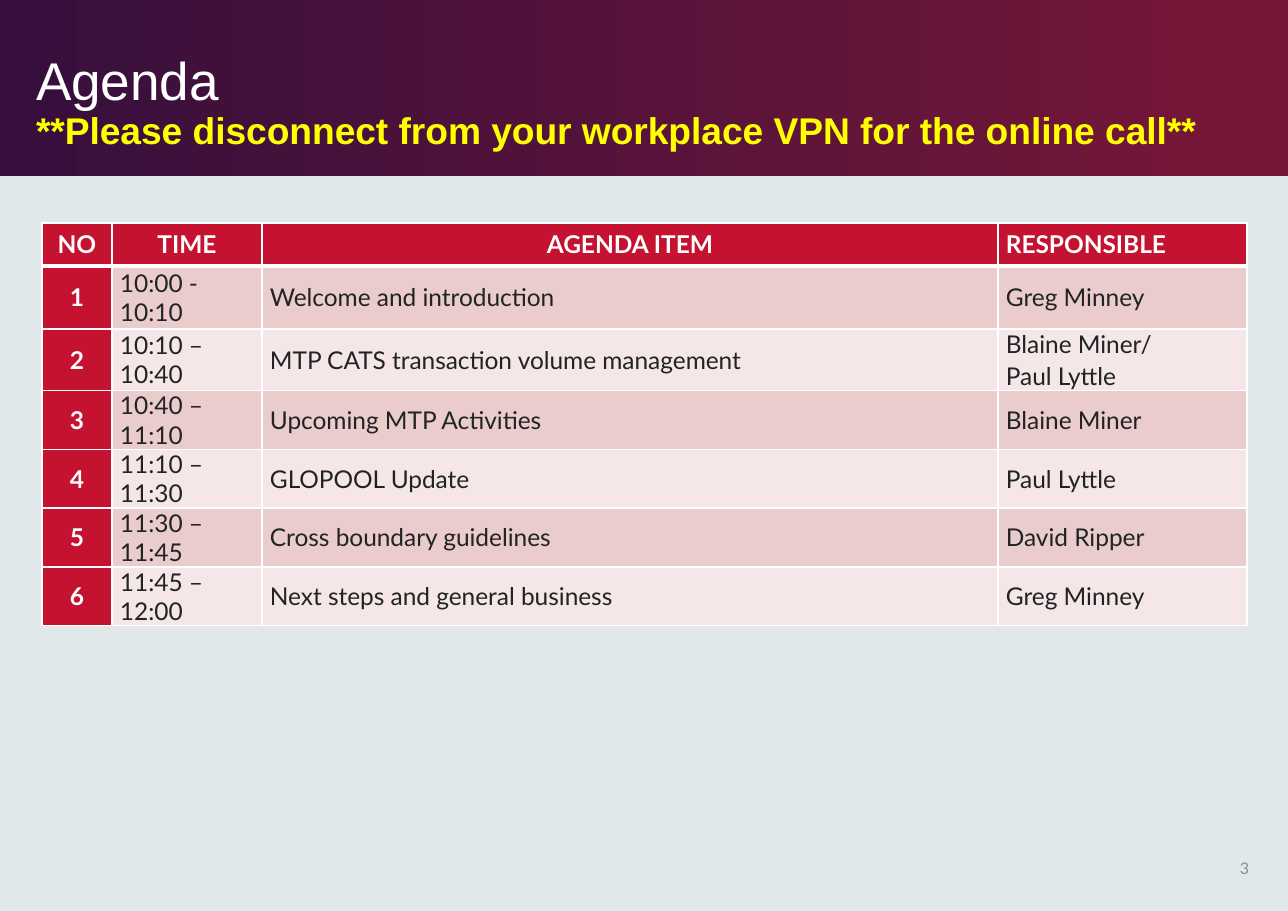
from lxml import etree
from pptx import Presentation
from pptx.dml.color import RGBColor
from pptx.enum.shapes import MSO_SHAPE
from pptx.enum.text import MSO_ANCHOR, MSO_AUTO_SIZE, PP_ALIGN
from pptx.oxml.ns import qn
from pptx.util import Pt

RECT = MSO_SHAPE.RECTANGLE
MIDDLE, BOTTOM = MSO_ANCHOR.MIDDLE, MSO_ANCHOR.BOTTOM
LEFT, CENTER, RIGHT = PP_ALIGN.LEFT, PP_ALIGN.CENTER, PP_ALIGN.RIGHT
SCALE = 8298  # EMU per px
WHITE, INK, RED = "FFFFFF", "222324", "C41230"
BANDS = ["EACCCD", "F5E7E8"]


def px(*lengths):
    return [n * SCALE for n in lengths]


def style(font, name, size, color, bold=False):
    font.name, font.size, font.bold = name, Pt(size), bold
    font.color.rgb = RGBColor.from_string(color)


prs = Presentation()
prs.slide_width, prs.slide_height = px(1288, 911)
s = prs.slides.add_slide(prs.slide_layouts[5])
s.background.fill.solid()
s.background.fill.fore_color.rgb = RGBColor.from_string("E0E8EA")

# Header band, behind the title
title = s.shapes.title
band = s.shapes.add_shape(RECT, *px(0, 0, 1288, 176))
band.shadow.inherit = False
band.line.fill.background()
band.fill.gradient()
band.fill.gradient_angle = 0
for stop, color, position in zip(band.fill.gradient_stops, ["360F3C", "771738"], [0, 0.99]):
    stop.color.rgb = RGBColor.from_string(color)
    stop.position = position
title._element.addprevious(band._element)

# Title
title.left, title.top, title.width, title.height = px(25, 0, 1263, 158)
tf = title.text_frame
tf.auto_size = MSO_AUTO_SIZE.NONE
tf.word_wrap = True
tf.vertical_anchor = BOTTOM
p = tf.paragraphs[0]
p.alignment = LEFT
p.line_spacing = 0.9
r = p.add_run()
r.text = "Agenda"
style(r.font, "Arial", 34.7, WHITE)
p.add_line_break()
r = p.add_run()
r.text = "**Please disconnect from your workplace VPN for the online call**"
style(r.font, "Arial", 24.3, "FFFF00", True)

# Agenda table
agenda = [
    ("NO", "TIME", "AGENDA ITEM", "RESPONSIBLE"),
    ("1", "10:00 - 10:10", "Welcome and introduction", "Greg Minney"),
    ("2", "10:10 – 10:40", "MTP CATS transaction volume management", "Blaine Miner/\nPaul Lyttle"),
    ("3", "10:40 – 11:10", "Upcoming MTP Activities", "Blaine Miner"),
    ("4", "11:10 – 11:30", "GLOPOOL Update", "Paul Lyttle"),
    ("5", "11:30 – 11:45", "Cross boundary guidelines", "David Ripper"),
    ("6", "11:45 – 12:00", "Next steps and general business", "Greg Minney"),
]
widths = [70, 150, 736, 249]
heights = [43, 63, 61, 59, 58, 59, 58]
table = s.shapes.add_table(
    len(agenda), len(widths), *px(42, 223, sum(widths), sum(heights))).table
for column, width in zip(table.columns, px(*widths)):
    column.width = width
for row, height in zip(table.rows, px(*heights)):
    row.height = height

for i, texts in enumerate(agenda):
    for j, text in enumerate(texts):
        cell = table.cell(i, j)
        heading = i == 0 or j == 0
        cell.text = text
        cell.vertical_anchor = MIDDLE
        cell.margin_left, cell.margin_right = px(8, 8)
        cell.margin_top = cell.margin_bottom = 0
        for p in cell.text_frame.paragraphs:
            p.alignment = CENTER if heading and j < 3 else LEFT
            if j == 0 or i < 3 and (i, j) not in [(0, 3), (2, 2)]:
                p.space_before = p.space_after = Pt(1)
            style(p.font, "Lato", 16, WHITE if heading else INK, heading)

        # White borders, thicker under the header row
        for side in "LRTB":
            thick = (i, side) in [(0, "B"), (1, "T")]
            ln = etree.SubElement(cell._tc.get_or_add_tcPr(), qn("a:ln" + side),
                                  w=str(Pt(3 if thick else 1)))
            fill = etree.SubElement(ln, qn("a:solidFill"))
            etree.SubElement(fill, qn("a:srgbClr"), val=WHITE)
        cell.fill.solid()
        cell.fill.fore_color.rgb = RGBColor.from_string(RED if heading else BANDS[(i - 1) % 2])

# Page number
number = s.shapes.add_textbox(*px(1200, 844, 60, 48))
tf = number.text_frame
tf.word_wrap = True
tf.vertical_anchor = MIDDLE
p = tf.paragraphs[0]
p.text = "3"
p.alignment = RIGHT
style(p.font, "Lato", 10.5, "8D8D8E")

prs.save("out.pptx")
